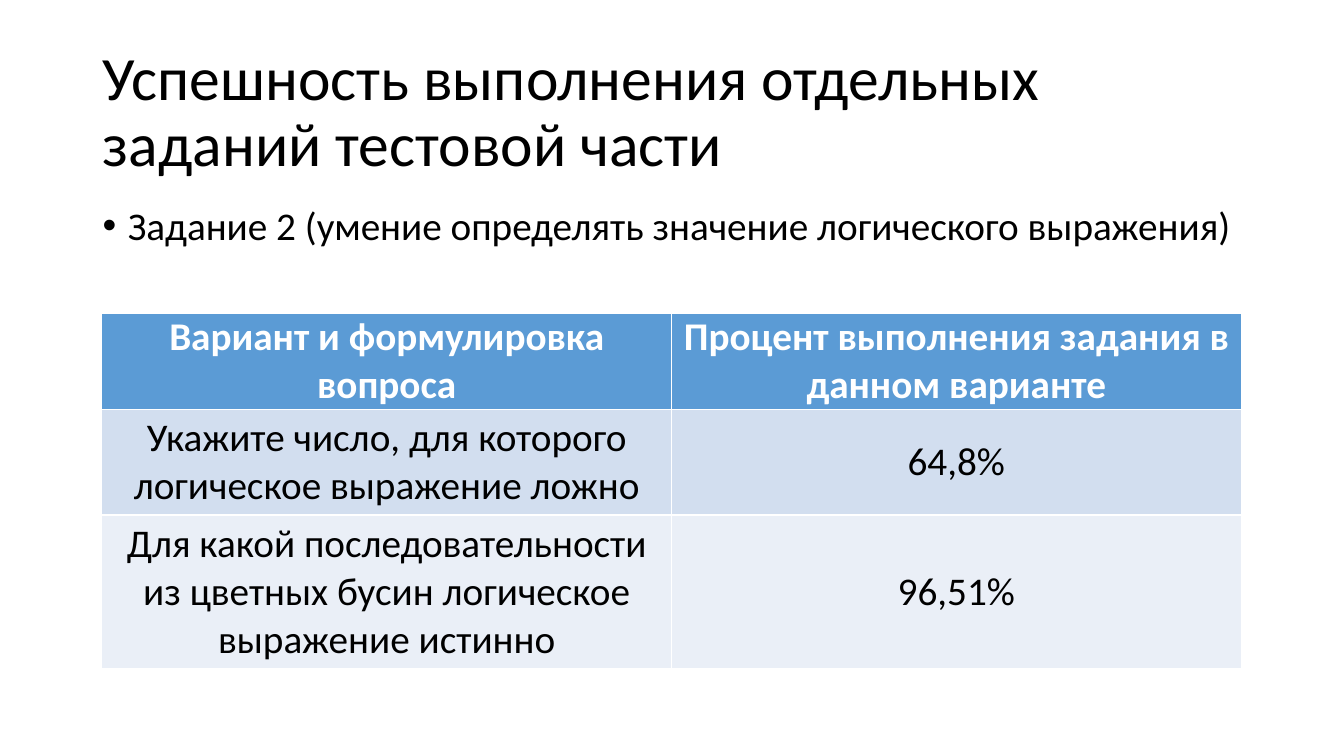
from lxml import etree
from pptx import Presentation
from pptx.dml.color import RGBColor
from pptx.enum.text import MSO_ANCHOR, PP_ALIGN
from pptx.oxml.ns import qn
from pptx.util import Inches, Pt

LEFT, CENTER = PP_ALIGN.LEFT, PP_ALIGN.CENTER
TOP, MIDDLE = MSO_ANCHOR.TOP, MSO_ANCHOR.MIDDLE
COLORS = {
    "text": "000000",
    "white": "FFFFFF",
    "header": "5B9BD5",
    "odd_row": "D2DEEF",
    "even_row": "EAEFF7",
}


def write_text(frame, text, size=28, color="text", bold=False, align=LEFT, spacing=1.0, before=0):
    frame.word_wrap = True
    paragraph = frame.paragraphs[0]
    paragraph.alignment = align
    paragraph.line_spacing = spacing
    paragraph.space_before = Pt(before)
    run = paragraph.add_run()
    run.text = text
    run.font.name = "Calibri"
    run.font.size = Pt(size)
    run.font.bold = bold
    run.font.color.rgb = RGBColor.from_string(COLORS[color])
    return paragraph


prs = Presentation()
prs.slide_width, prs.slide_height = Inches(13.33), Inches(7.5)
slide = prs.slides.add_slide(prs.slide_layouts[5])

heading = slide.shapes.title
heading.left, heading.top = Inches(0.92), Inches(0.4)
heading.width, heading.height = Inches(11.5), Inches(1.45)
heading.text_frame.vertical_anchor = MIDDLE
write_text(heading.text_frame, "Успешность выполнения отдельных заданий тестовой части",
           size=44, spacing=0.9)

task = slide.shapes.add_textbox(Inches(0.92), Inches(2), Inches(11.5), Inches(4.76))
task_line = write_text(task.text_frame,
                       "Задание 2 (умение определять значение логического выражения)",
                       spacing=0.9, before=10)
task_format = task_line._p.get_or_add_pPr()
task_format.set("marL", str(Inches(0.25)))
task_format.set("indent", str(Inches(-0.25)))
etree.SubElement(task_format, qn("a:buFont")).set("typeface", "Arial")
etree.SubElement(task_format, qn("a:buChar")).set("char", "•")

results = [
    ("Вариант и формулировка вопроса", "Процент выполнения задания в данном варианте"),
    ("Укажите число, для которого логическое выражение ложно", "64,8%"),
    ("Для какой последовательности из цветных бусин логическое выражение истинно", "96,51%"),
]
row_heights = [0.95, 1.05, 1.52]
row_fills = ["header", "odd_row", "even_row"]

results_table = slide.shapes.add_table(
    3, 2, Inches(1.01), Inches(3.11), Inches(11.31), Inches(sum(row_heights))).table
for column in results_table.columns:
    column.width = Inches(5.65)

for row, (texts, height, fill) in enumerate(zip(results, row_heights, row_fills)):
    results_table.rows[row].height = Inches(height)
    is_header = row == 0
    for col, text in enumerate(texts):
        cell = results_table.cell(row, col)
        cell.fill.solid()
        cell.fill.fore_color.rgb = RGBColor.from_string(COLORS[fill])
        cell.vertical_anchor = MIDDLE if is_header or col == 1 else TOP
        if is_header:
            cell.margin_left = cell.margin_right = Inches(0.05)
            cell.margin_top = cell.margin_bottom = Inches(0)
        write_text(cell.text_frame, text, color="white" if is_header else "text",
                   bold=is_header, align=CENTER)

prs.save("out.pptx")
